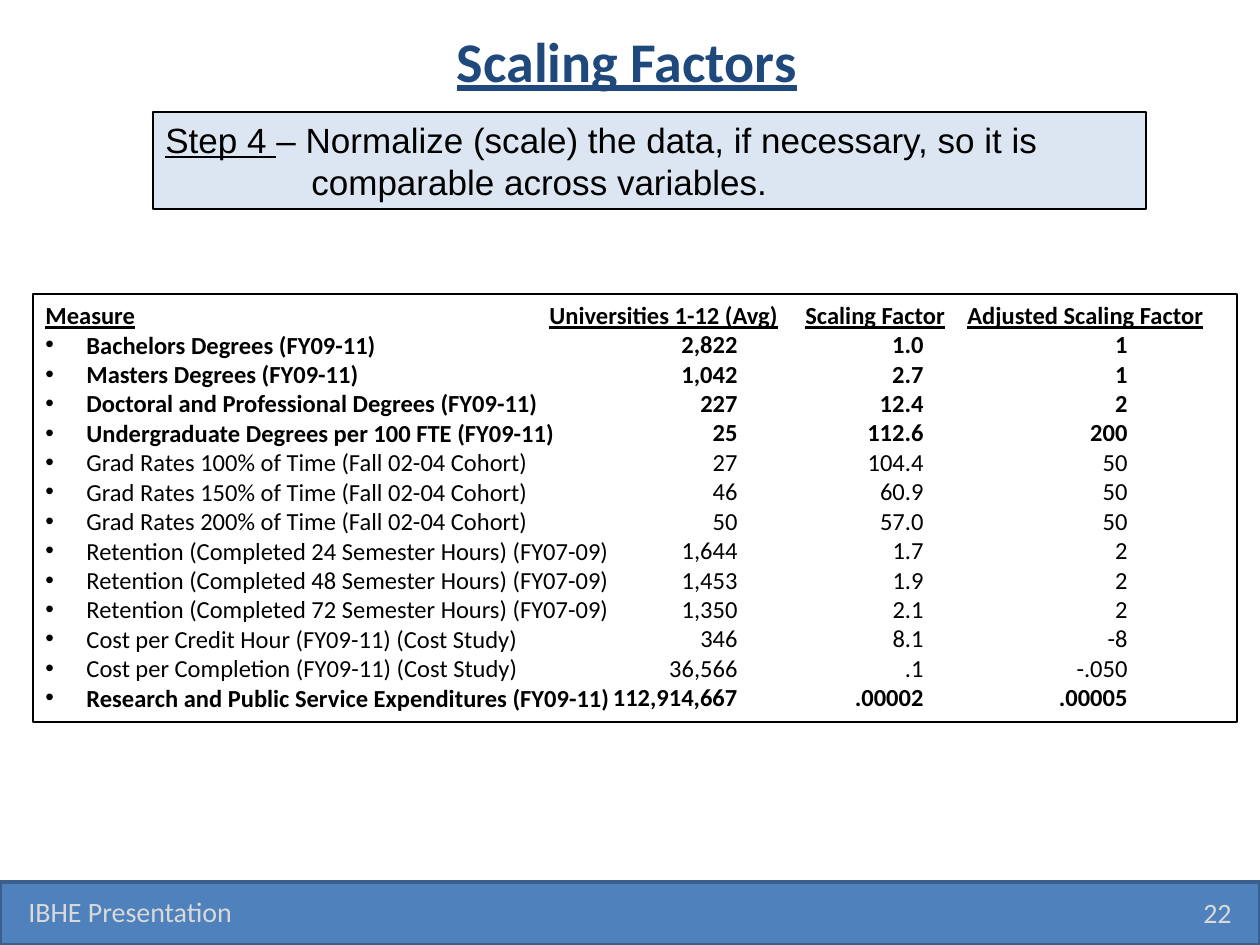
import pptx
import pptx.util
import pptx.dml.color
import pptx.enum.shapes
import pptx.enum.text
import pptx.oxml
import pptx.oxml.ns

EMU_PER_PX = 914400 / 126
COLORS = {
    "bar": "4F81BD", "bar_line": "3A5F8C", "title": "1F497D",
    "footer": "D9D9D9", "step": "DCE6F2", "text": "000000",
}
ALIGN = pptx.enum.text.PP_ALIGN
ANCHOR = pptx.enum.text.MSO_ANCHOR

# measure, university average, scaling factor, adjusted factor, bold
MEASURES = [
    ("Bachelors Degrees (FY09-11)", "2,822", "1.0", "1", True),
    ("Masters Degrees (FY09-11)", "1,042", "2.7", "1", True),
    ("Doctoral and Professional Degrees (FY09-11)", "227", "12.4", "2", True),
    ("Undergraduate Degrees per 100 FTE (FY09-11)", "25", "112.6", "200", True),
    ("Grad Rates 100% of Time (Fall 02-04 Cohort)", "27", "104.4", "50", False),
    ("Grad Rates 150% of Time (Fall 02-04 Cohort)", "46", "60.9", "50", False),
    ("Grad Rates 200% of Time (Fall 02-04 Cohort)", "50", "57.0", "50", False),
    ("Retention (Completed 24 Semester Hours) (FY07-09)", "1,644", "1.7", "2", False),
    ("Retention (Completed 48 Semester Hours) (FY07-09)", "1,453", "1.9", "2", False),
    ("Retention (Completed 72 Semester Hours) (FY07-09)", "1,350", "2.1", "2", False),
    ("Cost per Credit Hour (FY09-11) (Cost Study)", "346", "8.1", "-8", False),
    ("Cost per Completion (FY09-11) (Cost Study)", "36,566", ".1", "-.050", False),
    ("Research and Public Service Expenditures (FY09-11)",
     "112,914,667", ".00002", ".00005", True),
]
HEADINGS = ["Measure", "Universities 1-12 (Avg)", "Scaling Factor",
            "Adjusted Scaling Factor"]
HEADING_TABS = [504, 760, 922]
COLUMN_SPANS = [(451, 299), (813, 123), (1017, 123)]  # left, width


def px(length):
    return pptx.util.Emu(round(length * EMU_PER_PX))


def rgb(name):
    return pptx.dml.color.RGBColor.from_string(COLORS[name])


class SlideBuilder:
    def __init__(self, slide, font="Calibri"):
        self.slide = slide
        self.font = font

    def box(self, left, top, width, height, line, fill=None, weight=1):
        shape = self.slide.shapes.add_shape(
            pptx.enum.shapes.MSO_SHAPE.RECTANGLE,
            px(left), px(top), px(width), px(height))
        shape.shadow.inherit = False
        if fill:
            shape.fill.solid()
            shape.fill.fore_color.rgb = rgb(fill)
        else:
            shape.fill.background()
        shape.line.color.rgb = rgb(line)
        shape.line.width = pptx.util.Pt(weight)
        return self.frame(shape, ANCHOR.TOP)

    def text(self, left, top, width, height, anchor=ANCHOR.TOP):
        return self.frame(self.slide.shapes.add_textbox(
            px(left), px(top), px(width), px(height)), anchor)

    def frame(self, shape, anchor):
        shape.text_frame.word_wrap = True
        shape.text_frame.vertical_anchor = anchor
        return shape.text_frame

    def paragraph(self, frame, parts, size, color="text", align=ALIGN.LEFT,
                  bold=False, font=None, hanging=0, bullet=False, tabs=()):
        """Fill the empty first paragraph or add one; parts are (text, underlined)."""
        first = frame.paragraphs[0]
        paragraph = frame.add_paragraph() if first.runs else first
        paragraph.alignment = align
        properties = paragraph._p.get_or_add_pPr()
        if hanging:
            properties.set("marL", str(px(hanging)))
            properties.set("indent", str(-px(hanging)))
        if bullet:
            for tag, key, value in (("a:buFont", "typeface", "Arial"),
                                    ("a:buChar", "char", "•")):
                self.child(properties, tag, **{key: value})
        if tabs:
            tab_list = self.child(properties, "a:tabLst")
            for stop in tabs:
                self.child(tab_list, "a:tab", pos=str(px(stop)), algn="l")
        for content, underlined in parts:
            run = paragraph.add_run()
            run.text = content
            run.font.name = font or self.font
            run.font.size = pptx.util.Pt(size)
            run.font.bold = bold
            run.font.underline = underlined
            run.font.color.rgb = rgb(color)

    def child(self, parent, tag, **attributes):
        element = pptx.oxml.parse_xml(
            f'<{tag} {pptx.oxml.ns.nsdecls("a")}/>')
        for key, value in attributes.items():
            element.set(key, value)
        parent.append(element)
        return element


def main():
    deck = pptx.Presentation()
    deck.slide_width, deck.slide_height = px(1260), px(945)
    builder = SlideBuilder(deck.slides.add_slide(deck.slide_layouts[6]))

    builder.box(0, 882, 1260, 63, "bar_line", "bar", 2)
    title = builder.text(60, 0, 1134, 120, ANCHOR.MIDDLE)
    builder.paragraph(title, [("Scaling Factors", True)], 32, "title",
                      ALIGN.CENTER, bold=True)
    footer = builder.text(16, 886, 399, 50, ANCHOR.MIDDLE)
    builder.paragraph(footer, [("IBHE Presentation", False)], 16, "footer")
    page = builder.text(1182, 887, 62, 50, ANCHOR.MIDDLE)
    builder.paragraph(page, [("22", False)], 16, "footer", ALIGN.RIGHT)

    step = builder.box(153, 112, 993, 97, "text", "step")
    builder.paragraph(step, [
        ("Step 4 ", True),
        ("– Normalize (scale) the data, if necessary, so it is "
         "comparable across variables.", False),
    ], 20, font="Arial", hanging=146)

    measures = builder.box(33, 294, 1204, 428, "text")
    heading_parts = [(HEADINGS[0], True)]
    for heading in HEADINGS[1:]:
        heading_parts += [("\t", False), (heading, True)]
    builder.paragraph(measures, heading_parts, 14, bold=True, tabs=HEADING_TABS)
    for name, *_, bold in MEASURES:
        builder.paragraph(measures, [(name, False)], 14, bold=bold,
                          hanging=41, bullet=True)

    for column, (left, width) in enumerate(COLUMN_SPANS, start=1):
        values = builder.text(left, 323, width, 398)
        for row in MEASURES:
            builder.paragraph(values, [(row[column], False)], 14,
                              align=ALIGN.RIGHT, bold=row[-1])

    deck.save("out.pptx")


if __name__ == "__main__":
    main()
